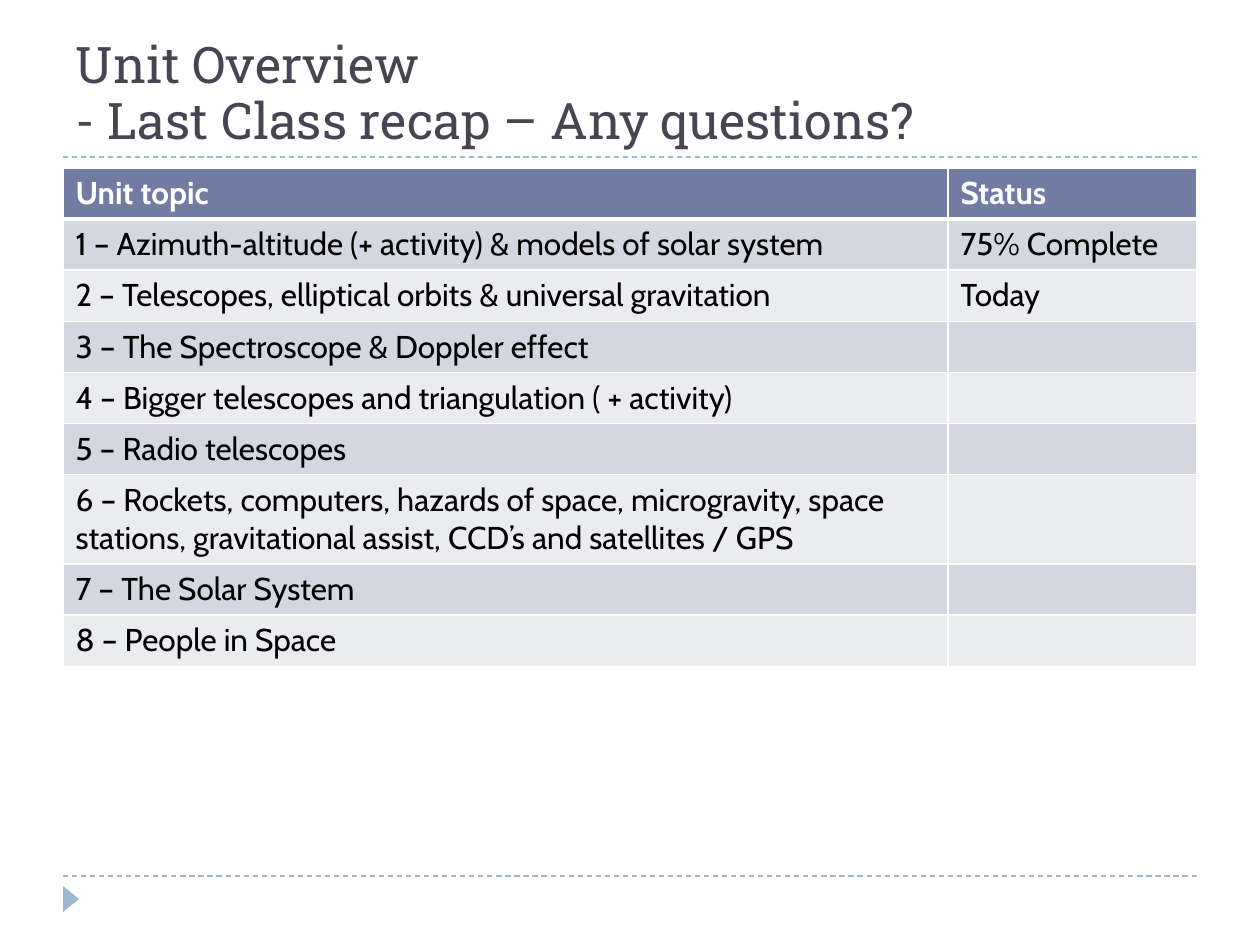
from lxml import etree
from pptx import Presentation
from pptx.dml.color import RGBColor
from pptx.enum.dml import MSO_LINE
from pptx.enum.shapes import MSO_CONNECTOR, MSO_SHAPE
from pptx.enum.text import MSO_ANCHOR, MSO_AUTO_SIZE, PP_ALIGN
from pptx.oxml.ns import qn
from pptx.util import Pt

DASH = MSO_LINE.DASH
STRAIGHT = MSO_CONNECTOR.STRAIGHT
TRIANGLE = MSO_SHAPE.ISOSCELES_TRIANGLE
BOTTOM = MSO_ANCHOR.BOTTOM
NO_FIT = MSO_AUTO_SIZE.NONE
LEFT = PP_ALIGN.LEFT

TITLE = "Unit Overview\v- Last Class recap – Any questions?"
ROWS = [
    ("Unit topic", "Status"),
    ("1 – Azimuth-altitude (+ activity) & models of solar system", "75% Complete"),
    ("2 – Telescopes, elliptical orbits & universal gravitation", "Today"),
    ("3 – The Spectroscope & Doppler effect", ""),
    ("4 – Bigger telescopes and triangulation ( + activity)", ""),
    ("5 – Radio telescopes", ""),
    ("6 – Rockets, computers, hazards of space, microgravity, space stations, "
     "gravitational assist, CCD’s and satellites / GPS", ""),
    ("7 – The Solar System", ""),
    ("8 – People in Space", ""),
]
COLORS = {
    "title": "464653", "accent": "9FB8CD", "header": "727CA3",
    "odd": "D5D7E0", "even": "EBECF0", "white": "FFFFFF", "black": "000000",
}
COL_WIDTHS = (885, 249)
ROW_HEIGHT, TALL_HEIGHT, TALL_ROW = 51, 88, 6
LEFT_EDGE, RIGHT_EDGE = 63, 1197
RULES = (157, 876)


def px(n):
    return n * 914400 // 126


def rgb(name):
    return RGBColor.from_string(COLORS[name])


def write(tf, text, font="Cabin", size=18, color="black", bold=False, spacing=None):
    p = tf.paragraphs[0]
    p.text = text
    p.alignment = LEFT
    p.line_spacing = spacing
    for r in p.runs:
        r.font.name = font
        r.font.size = Pt(size)
        r.font.bold = bold
        r.font.color.rgb = rgb(color)


def add_borders(cell, header, below_header):
    tc_pr = cell._tc.get_or_add_tcPr()
    widths = {"lnL": 1, "lnR": 1, "lnT": 3 if below_header else 1, "lnB": 3 if header else 1}
    for i, (tag, width) in enumerate(widths.items()):
        ln = etree.Element(qn(f"a:{tag}"), w=str(Pt(width)))
        fill = etree.SubElement(ln, qn("a:solidFill"))
        etree.SubElement(fill, qn("a:srgbClr"), val=COLORS["white"])
        tc_pr.insert(i, ln)


prs = Presentation()
prs.slide_width, prs.slide_height = px(1260), px(945)
s = prs.slides.add_slide(prs.slide_layouts[5])

for y in RULES:
    line = s.shapes.add_connector(STRAIGHT, px(LEFT_EDGE), px(y), px(RIGHT_EDGE), px(y))
    line.line.color.rgb = rgb("accent")
    line.line.width = Pt(0.75)
    line.line.dash_style = DASH
    etree.SubElement(line._element.spPr, qn("a:effectLst"))

marker = s.shapes.add_shape(TRIANGLE, px(58), px(891), px(26), px(16))
marker.rotation = 90
marker.shadow.inherit = False
marker.fill.solid()
marker.fill.fore_color.rgb = rgb("accent")
marker.line.fill.background()

title = s.shapes.title
title.left, title.top = px(LEFT_EDGE), px(21)
title.width, title.height = px(RIGHT_EDGE - LEFT_EDGE), px(136)
tf = title.text_frame
tf.word_wrap = True
tf.auto_size = NO_FIT
tf.vertical_anchor = BOTTOM
write(tf, TITLE, font="Roboto Slab", size=28.8, color="title", spacing=0.93)

heights = [TALL_HEIGHT if i == TALL_ROW else ROW_HEIGHT for i in range(len(ROWS))]
table = s.shapes.add_table(len(ROWS), len(COL_WIDTHS), px(LEFT_EDGE), px(168),
                           px(sum(COL_WIDTHS)), px(sum(heights))).table
for col, width in zip(table.columns, COL_WIDTHS):
    col.width = px(width)
for i, (texts, height) in enumerate(zip(ROWS, heights)):
    table.rows[i].height = px(height)
    header = i == 0
    fill = "header" if header else "odd" if i % 2 else "even"
    for j, text in enumerate(texts):
        cell = table.cell(i, j)
        cell.fill.solid()
        cell.fill.fore_color.rgb = rgb(fill)
        add_borders(cell, header, i == 1)
        write(cell.text_frame, text, color="white" if header else "black", bold=header)

prs.save("out.pptx")
